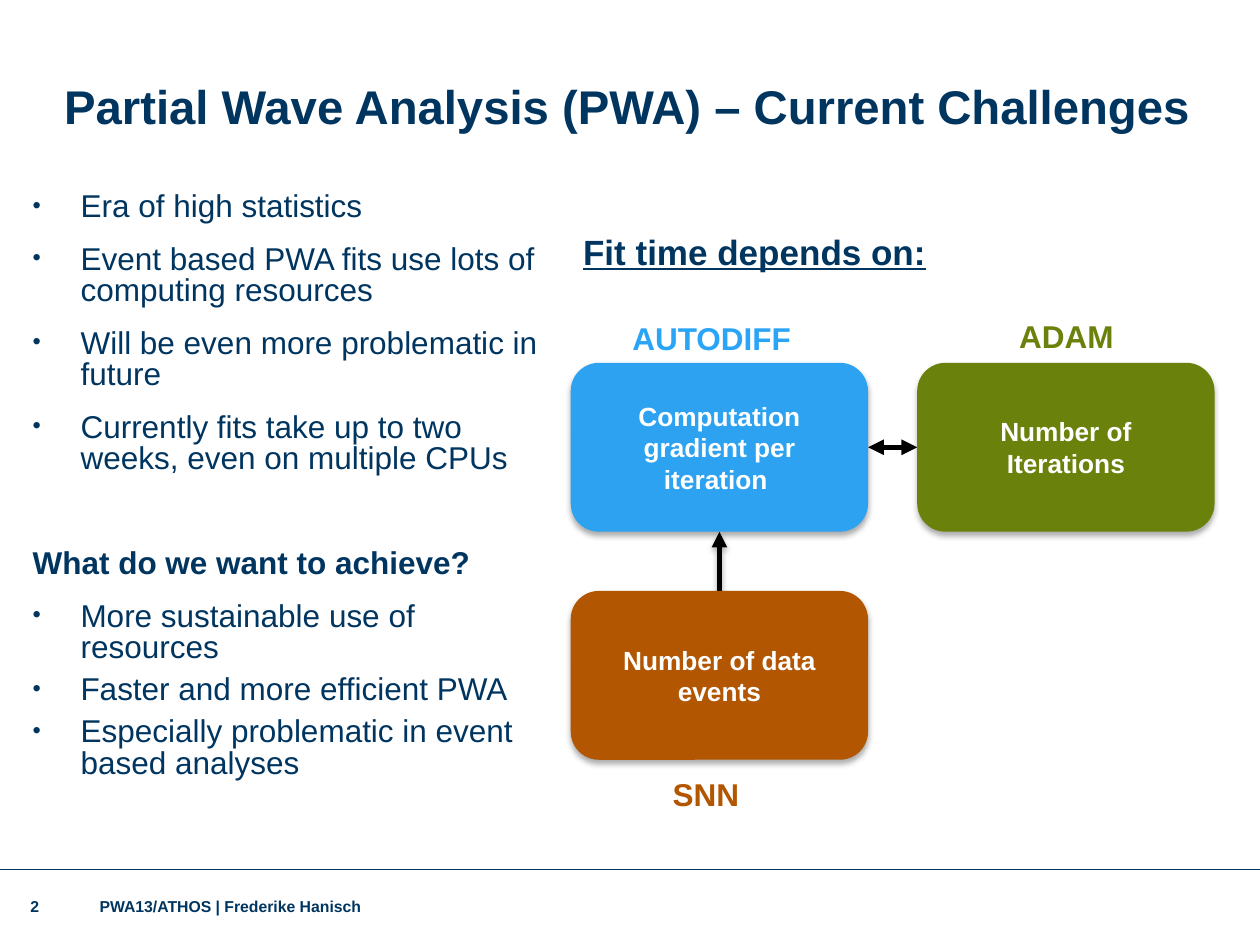
from dataclasses import dataclass

from lxml.etree import SubElement
from pptx import Presentation
from pptx.dml.color import RGBColor
from pptx.enum.shapes import MSO_CONNECTOR, MSO_SHAPE
from pptx.enum.text import MSO_ANCHOR, PP_ALIGN
from pptx.oxml.ns import qn
from pptx.util import Inches, Pt

COLORS = {
    "navy": "003560",
    "sky": "29A4F7",
    "blue": "2DA2F1",
    "green": "6A820C",
    "brown": "B25602",
    "black": "000000",
    "white": "FFFFFF",
}
FONT = "Arial"
BOX_WIDTH, BOX_HEIGHT = 2.36, 1.34
LEFT_COLUMN, RIGHT_COLUMN = 4.53, 7.28
TOP_ROW, BOTTOM_ROW = 2.88, 4.69
BULLET_INDENT = Inches(0.38)


@dataclass
class Factor:
    lines: list[str]
    left: float
    top: float
    fill: str


@dataclass
class Label:
    text: str
    left: float
    top: float
    width: float
    height: float
    size: float
    color: str = "navy"
    bold: bool = True
    underline: bool = False
    inset: float = 0
    anchor: MSO_ANCHOR = MSO_ANCHOR.TOP


@dataclass
class Point:
    text: str
    after: float
    before: float = 0
    bullet: bool = True


@dataclass
class Arrow:
    start: tuple[float, float]
    end: tuple[float, float]
    both_ends: bool = False
    shadow: bool = False


FACTORS = [
    Factor(["Computation", "gradient per iteration "], LEFT_COLUMN, TOP_ROW, "blue"),
    Factor(["Number of data events"], LEFT_COLUMN, BOTTOM_ROW, "brown"),
    Factor(["Number of Iterations"], RIGHT_COLUMN, TOP_ROW, "green"),
]

LABELS = [
    Label("Partial Wave Analysis (PWA) – Current Challenges", 0.51, 0.61, 9.13, 0.68, 27),
    Label("Fit time depends on:", 4.53, 1.78, 4.33, 0.44, 20, underline=True, inset=0.1),
    Label("AUTODIFF", 4.92, 2.48, 1.89, 0.4, 18, "sky", inset=0.1),
    Label("ADAM", 7.99, 2.47, 1.89, 0.4, 18, "green", inset=0.1),
    Label("SNN", 5.24, 6.1, 1.89, 0.4, 18, "brown", inset=0.1),
    Label("PWA13/ATHOS | Frederike Hanisch", 0.79, 7.14, 8.04, 0.11, 9, anchor=MSO_ANCHOR.MIDDLE),
    Label("2", 0.24, 7.04, 0.59, 0.31, 9, anchor=MSO_ANCHOR.MIDDLE),
]

POINTS = [
    Point("Era of high statistics", 12),
    Point("Event based PWA fits use lots of computing resources", 12),
    Point("Will be even more problematic in future", 12),
    Point("Currently fits take up to two weeks, even on multiple CPUs", 12),
    Point("What do we want to achieve?", 12, before=30, bullet=False),
    Point("More sustainable use of resources", 6),
    Point("Faster and more efficient PWA", 6),
    Point("Especially problematic in event based analyses", 6),
]

ARROWS = [
    Arrow((5.71, 5.09), (5.71, TOP_ROW + BOX_HEIGHT), shadow=True),
    Arrow((LEFT_COLUMN + BOX_WIDTH, 3.55), (RIGHT_COLUMN, 3.55), both_ends=True),
]


def rgb(name: str) -> RGBColor:
    return RGBColor.from_string(COLORS[name])


def write(para, text: str, *, size: float, color: str = "navy", bold: bool = False,
          underline: bool = False) -> None:
    span = para.add_run()
    span.text = text
    font = span.font
    font.name = FONT
    font.size = Pt(size)
    font.bold = bold
    font.color.rgb = rgb(color)
    if underline:
        font.underline = True


def add_box(page, left: float, top: float, width: float, height: float,
            inset: float = 0, anchor: MSO_ANCHOR = MSO_ANCHOR.TOP):
    box = page.shapes.add_textbox(Inches(left), Inches(top), Inches(width), Inches(height))
    frame = box.text_frame
    frame.word_wrap = True
    frame.vertical_anchor = anchor
    frame.margin_left = frame.margin_right = Inches(inset)
    frame.margin_top = frame.margin_bottom = Inches(inset / 2)
    return frame


def add_shadow(effects) -> None:
    shadow = SubElement(effects, qn("a:outerShdw"), blurRad=str(Pt(3.5)),
                        dist=str(Pt(2.2)), dir="5400000", rotWithShape="0")
    color = SubElement(shadow, qn("a:srgbClr"), val=COLORS["black"])
    SubElement(color, qn("a:alpha"), val="32000")


def add_line(page, start: tuple[float, float], end: tuple[float, float],
             color: str, width: float):
    line = page.shapes.add_connector(MSO_CONNECTOR.STRAIGHT, *map(Inches, start + end))
    line.line.color.rgb = rgb(color)
    line.line.width = Pt(width)
    effects = SubElement(line._element.spPr, qn("a:effectLst"))
    return line, effects


def add_arrow(page, arrow: Arrow) -> None:
    line, effects = add_line(page, arrow.start, arrow.end, "black", 3)
    outline = line._element.spPr.find(qn("a:ln"))
    for end in ["headEnd", "tailEnd"] if arrow.both_ends else ["tailEnd"]:
        SubElement(outline, qn(f"a:{end}"), type="triangle")
    if arrow.shadow:
        add_shadow(effects)


def add_factor(page, factor: Factor) -> None:
    shape = page.shapes.add_shape(MSO_SHAPE.ROUNDED_RECTANGLE, Inches(factor.left),
                                  Inches(factor.top), Inches(BOX_WIDTH), Inches(BOX_HEIGHT))
    shape.fill.solid()
    shape.fill.fore_color.rgb = rgb(factor.fill)
    shape.line.fill.background()
    shape.shadow.inherit = False
    add_shadow(shape._element.spPr.find(qn("a:effectLst")))
    frame = shape.text_frame
    frame.word_wrap = True
    frame.vertical_anchor = MSO_ANCHOR.MIDDLE
    for index, text in enumerate(factor.lines):
        para = frame.add_paragraph() if index else frame.paragraphs[0]
        para.alignment = PP_ALIGN.CENTER
        write(para, text, size=15, color="white", bold=True)


def add_label(page, label: Label) -> None:
    frame = add_box(page, label.left, label.top, label.width, label.height,
                    label.inset, label.anchor)
    write(frame.paragraphs[0], label.text, size=label.size, color=label.color,
          bold=label.bold, underline=label.underline)


def add_points(page, points: list[Point]) -> None:
    frame = add_box(page, 0.26, 1.53, 4.03, 2.96)
    for index, point in enumerate(points):
        para = frame.add_paragraph() if index else frame.paragraphs[0]
        para.line_spacing = Pt(18)
        para.space_after = Pt(point.after)
        if point.before:
            para.space_before = Pt(point.before)
        if point.bullet:
            properties = para._p.get_or_add_pPr()
            properties.set("marL", str(BULLET_INDENT))
            properties.set("indent", str(-BULLET_INDENT))
            SubElement(properties, qn("a:buSzPct"), val="75000")
            SubElement(properties, qn("a:buFont"), typeface=FONT)
            SubElement(properties, qn("a:buChar"), char="•")
        write(para, point.text, size=18, bold=not point.bullet)


def main() -> None:
    deck = Presentation()
    deck.slide_width, deck.slide_height = Inches(10), Inches(7.5)
    page = deck.slides.add_slide(deck.slide_layouts[6])
    add_line(page, (0, 6.9), (10, 6.9), "navy", 0.5)
    for arrow in ARROWS:
        add_arrow(page, arrow)
    add_points(page, POINTS)
    for factor in FACTORS:
        add_factor(page, factor)
    for label in LABELS:
        add_label(page, label)
    deck.save("out.pptx")


if __name__ == "__main__":
    main()
